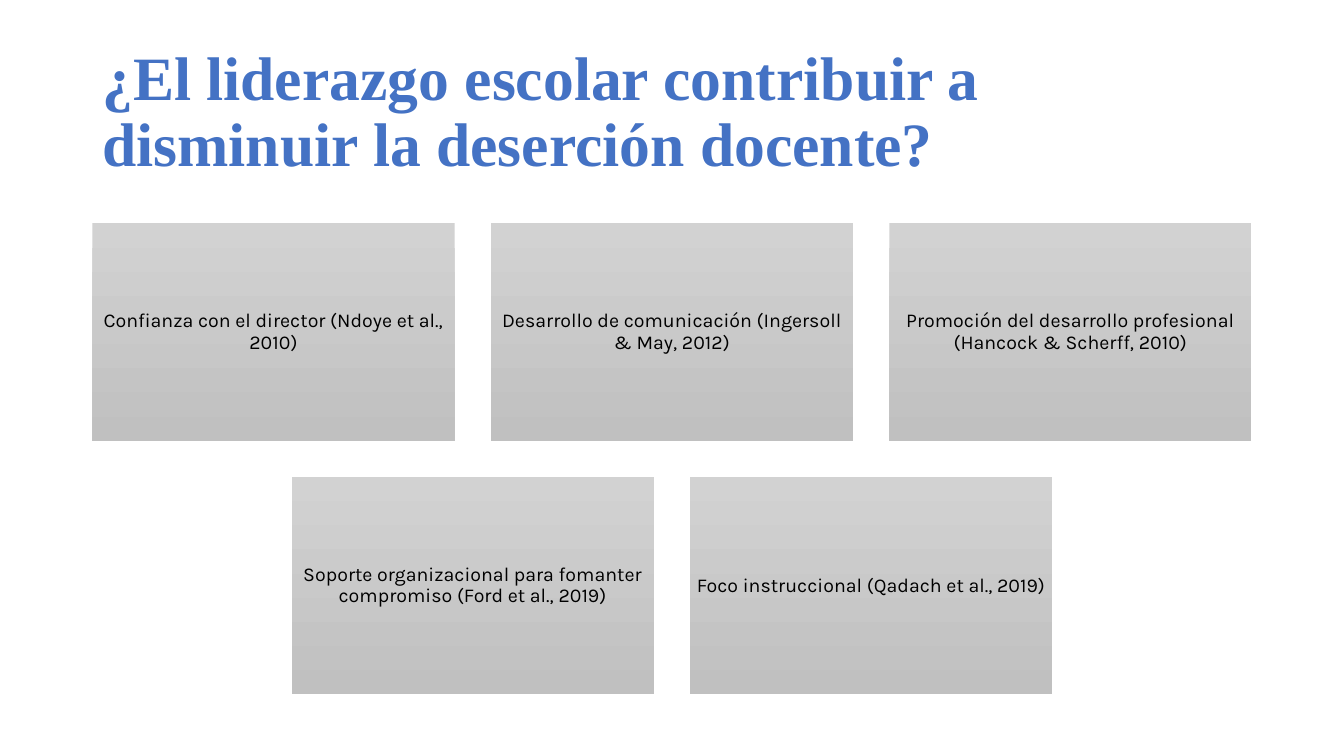
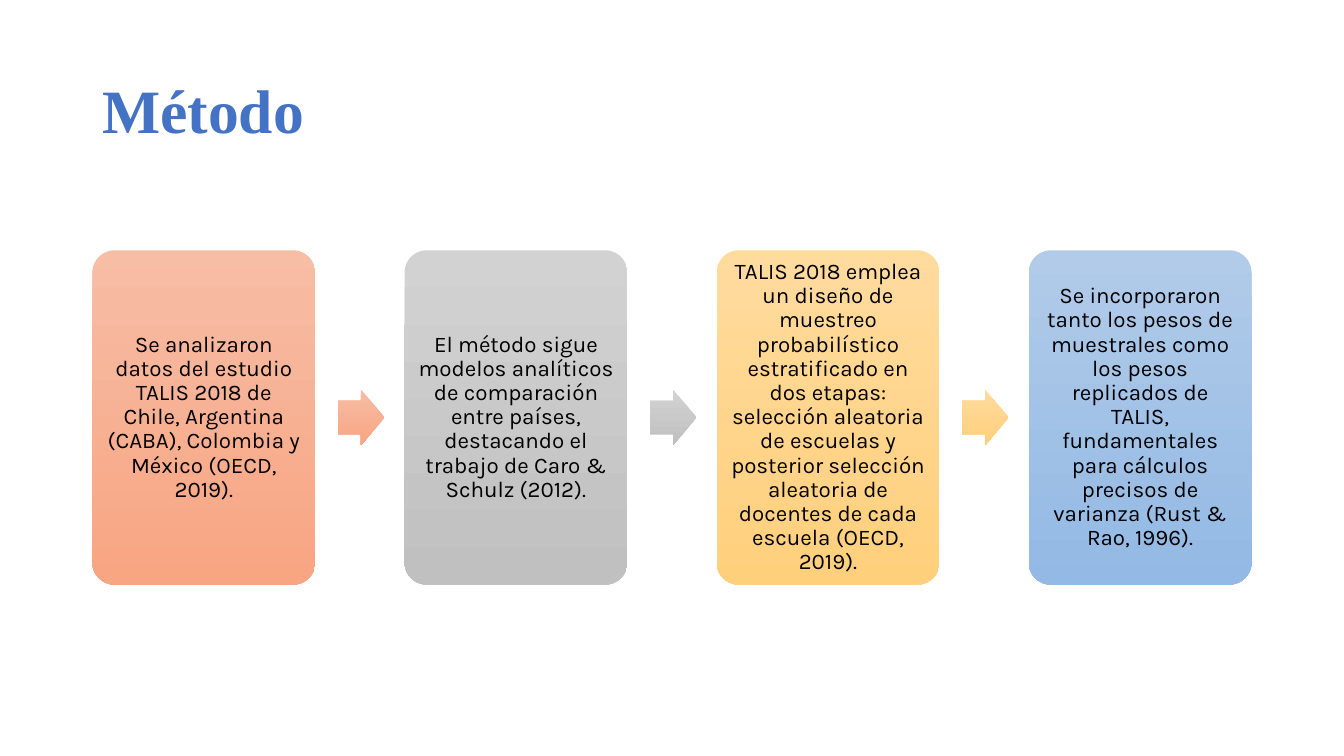
from itertools import zip_longest

from pptx import Presentation
from pptx import util as u
from pptx.dml.color import RGBColor
from pptx.enum import shapes, text

# Shared look
TITLE_BLUE = RGBColor(0x44, 0x72, 0xC4)
BLACK = RGBColor(0x00, 0x00, 0x00)
# Each gradient runs from its top colour to its bottom colour
ORANGE = RGBColor(0xF7, 0xBD, 0xA5), RGBColor(0xF8, 0xA5, 0x82)
GRAY = RGBColor(0xD2, 0xD2, 0xD2), RGBColor(0xC0, 0xC0, 0xC0)
YELLOW = RGBColor(0xFF, 0xDB, 0x9E), RGBColor(0xFF, 0xD0, 0x7C)
BLUE = RGBColor(0xB1, 0xCB, 0xE9), RGBColor(0x93, 0xB9, 0xE4)
TITLE_FONT, BODY_FONT = "Times New Roman", "Karla"

# Grid of 160 columns by 90 square units; boxes are left, top, width, height
COLUMNS, ROWS = 160, 90
UNIT = u.Inches(7.5) / ROWS
TITLE_BOX = 11, 4.8, 138, 17.4
FACTORS_BOX = 11, 26.6, 138, 56.06
STEPS_BOX = 11, 29.8, 138, 39.8

FACTORS = [
    ["Confianza con el director (Ndoye et al., 2010)",
     "Desarrollo de comunicación (Ingersoll & May, 2012)",
     "Promoción del desarrollo profesional (Hancock & Scherff, 2010)"],
    ["Soporte organizacional para fomanter compromiso (Ford et al., 2019)",
     "Foco instruccional (Qadach et al., 2019)"],
]
STEPS = [
    ("Se analizaron datos del estudio TALIS 2018 de Chile, Argentina (CABA), "
     "Colombia y México (OECD, 2019).", ORANGE),
    ("El método sigue modelos analíticos de comparación entre países, "
     "destacando el trabajo de Caro & Schulz (2012).", GRAY),
    ("TALIS 2018 emplea un diseño de muestreo probabilístico estratificado en "
     "dos etapas: selección aleatoria de escuelas y posterior selección "
     "aleatoria de docentes de cada escuela (OECD, 2019).", YELLOW),
    ("Se incorporaron tanto los pesos de muestrales como los pesos replicados "
     "de TALIS, fundamentales para cálculos precisos de varianza "
     "(Rust & Rao, 1996).", BLUE),
]


def place(box):
    """Turn grid units into slide lengths."""
    return [u.Emu(round(length * UNIT)) for length in box]


def write(holder, words, size, font=BODY_FONT, color=BLACK, bold=False,
          align=text.PP_ALIGN.CENTER, inset=None):
    """Put formatted, vertically centred text in a shape or text box."""
    frame = holder.text_frame
    frame.word_wrap = True
    frame.auto_size = text.MSO_AUTO_SIZE.NONE
    frame.vertical_anchor = text.MSO_ANCHOR.MIDDLE
    if inset is not None:
        frame.margin_left = frame.margin_right = inset
        frame.margin_top = frame.margin_bottom = inset
    paragraph = frame.paragraphs[0]
    paragraph.alignment = align
    paragraph.line_spacing = 0.9
    run = paragraph.add_run()
    run.text = words
    run.font.size = u.Pt(size)
    run.font.name = font
    run.font.bold = bold
    run.font.color.rgb = color


def add_block(slide, kind, box, colors, adjustments=()):
    """Add a borderless shape with a top-to-bottom gradient."""
    block = slide.shapes.add_shape(kind, *place(box))
    block.shadow.inherit = False
    block.line.fill.background()
    block.fill.gradient()
    block.fill.gradient_angle = 270
    for stop, color in zip(block.fill.gradient_stops, colors):
        stop.color.rgb = color
    for index, value in enumerate(adjustments):
        block.adjustments[index] = value
    return block


def add_titled_slide(deck, title):
    slide = deck.slides.add_slide(deck.slide_layouts[6])
    write(slide.shapes.add_textbox(*place(TITLE_BOX)), title, 44,
          font=TITLE_FONT, color=TITLE_BLUE, bold=True,
          align=text.PP_ALIGN.LEFT)
    return slide


def add_factor_cards(slide, box, rows):
    """Rows of equal cards, each row centred in the box."""
    left, top, width, height = box
    most = max(len(row) for row in rows)
    card_width = width / (most + 0.1 * (most - 1))
    gap = 0.1 * card_width
    card_height = (height - gap * (len(rows) - 1)) / len(rows)
    for row_index, row in enumerate(rows):
        row_width = len(row) * (card_width + gap) - gap
        row_left = left + (width - row_width) / 2
        for column, factor in enumerate(row):
            card = add_block(
                slide, shapes.MSO_SHAPE.RECTANGLE,
                (row_left + column * (card_width + gap),
                 top + row_index * (card_height + gap),
                 card_width, card_height), GRAY)
            write(card, factor, 14, inset=u.Pt(4.2))


def add_process(slide, box, steps):
    """Equal rounded steps with an arrow in each gap."""
    left, top, width, height = box
    step_width = width / (len(steps) + 0.4 * (len(steps) - 1))
    arrow_width, arrow_height = 0.21 * step_width, 0.25 * step_width
    for index, (words, colors) in enumerate(steps):
        step_left = left + index * 1.4 * step_width
        step = add_block(slide, shapes.MSO_SHAPE.ROUNDED_RECTANGLE,
                         (step_left, top, step_width, height), colors, [0.1])
        write(step, words, 16, inset=u.Pt(4.8))
        if index < len(steps) - 1:
            add_block(slide, shapes.MSO_SHAPE.RIGHT_ARROW,
                      (step_left + 1.1 * step_width,
                       top + (height - arrow_height) / 2,
                       arrow_width, arrow_height), colors, [0.6, 0.5])


def main():
    deck = Presentation()
    deck.slide_width, deck.slide_height = place((COLUMNS, ROWS))

    # School leadership factors
    leadership = add_titled_slide(
        deck,
        "¿El liderazgo escolar contribuir a disminuir la deserción docente?")
    add_factor_cards(leadership, FACTORS_BOX, FACTORS)

    # Method
    method = add_titled_slide(deck, "Método")
    add_process(method, STEPS_BOX, STEPS)

    deck.save("out.pptx")


if __name__ == "__main__":
    main()
